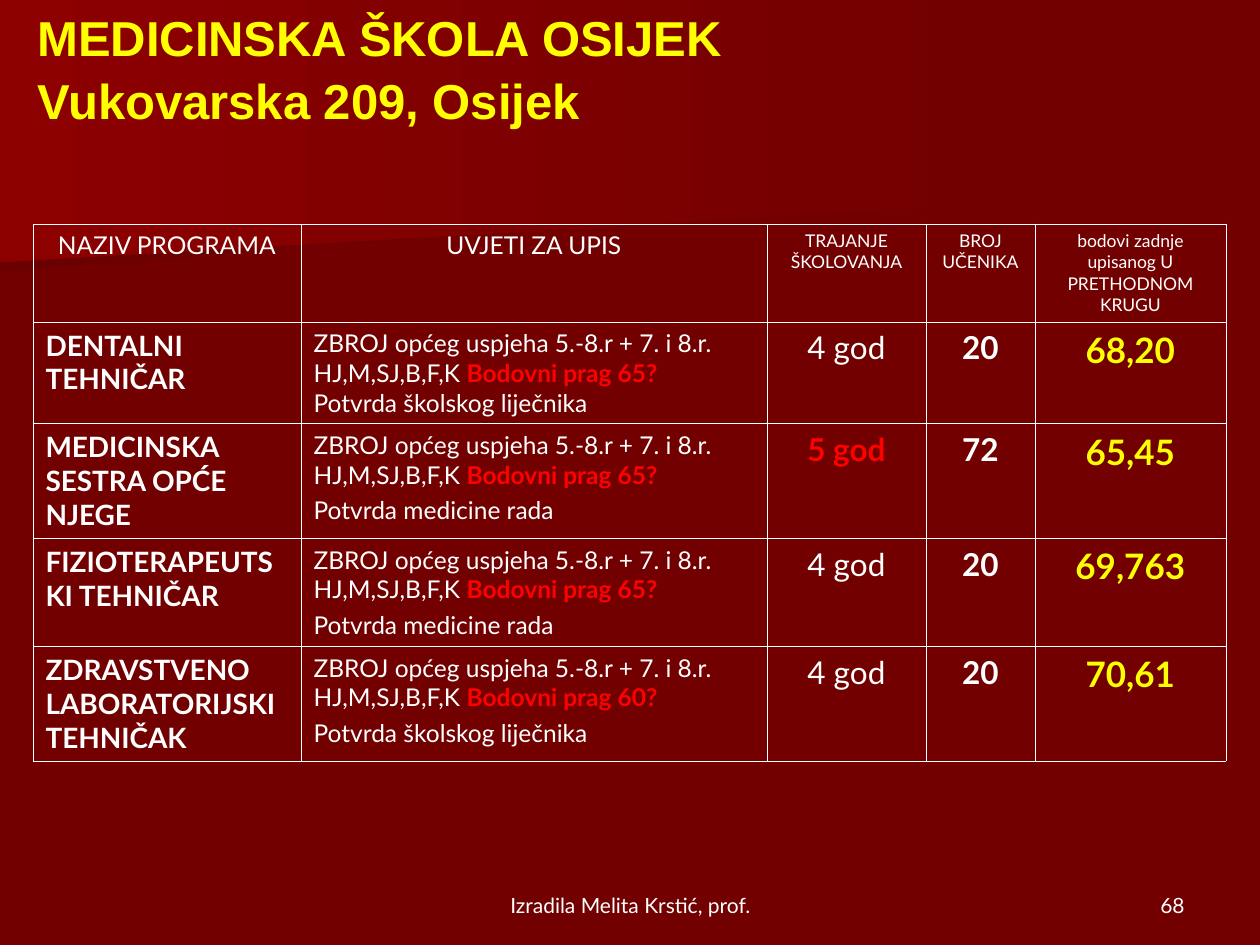
from lxml import etree
from pptx import Presentation, util as u
from pptx.dml import color as dml
from pptx.enum import text as t
from pptx.oxml import ns

PX = u.Inches(1) / 126
WHITE, YELLOW, RED, MAROON = "FFFFFF", "FFFF00", "FF0000", "720000"
LEFT, CENTER, RIGHT = t.PP_ALIGN.LEFT, t.PP_ALIGN.CENTER, t.PP_ALIGN.RIGHT
TOP, BOTTOM = t.MSO_ANCHOR.TOP, t.MSO_ANCHOR.BOTTOM

COLUMNS = [268, 466, 159, 109, 191]
ROWS = [98, 101, 115, 108, 114]
HEADERS = [
    ("NAZIV PROGRAMA", 14),
    ("UVJETI ZA UPIS", 14),
    ("TRAJANJE ŠKOLOVANJA", 10),
    ("BROJ UČENIKA", 10),
    ("bodovi zadnje upisanog U PRETHODNOM KRUGU", 10),
]
CONDITION = "ZBROJ općeg uspjeha 5.-8.r + 7. i 8.r. HJ,M,SJ,B,F,K "
# name, threshold, certificate, gap before certificate, years, pupils, points
PROGRAMMES = [
    ("DENTALNI TEHNIČAR", 65, "školskog liječnika", 0, 4, "20", "68,20"),
    ("MEDICINSKA SESTRA OPĆE NJEGE", 65, "medicine rada", 3.5, 5, "72", "65,45"),
    ("FIZIOTERAPEUTSKI TEHNIČAR", 65, "medicine rada", 3.5, 4, "20", "69,763"),
    ("ZDRAVSTVENO LABORATORIJSKI TEHNIČAK", 60, "školskog liječnika", 3.5, 4,
     "20", "70,61"),
]


def px(value):
    return u.Emu(round(value * PX))


def rgb(value):
    return dml.RGBColor.from_string(value)


def set_all(target, values):
    for name, value in values.items():
        setattr(target, name, value)


def run(text, size, color=WHITE, bold=False, font="Lato"):
    return text, color, {"size": u.Pt(size), "bold": bold, "name": font}


def write(frame, paragraphs, **layout):
    """Each paragraph is a list of runs; layout holds paragraph attributes."""
    for index, runs in enumerate(paragraphs):
        paragraph = frame.add_paragraph() if index else frame.paragraphs[0]
        set_all(paragraph, layout)
        if not index:
            paragraph.space_before = None
        for text, color, values in runs:
            piece = paragraph.add_run()
            piece.text = text
            set_all(piece.font, values)
            piece.font.color.rgb = rgb(color)


def add_text(slide, box, paragraphs, anchor, **layout):
    frame = slide.shapes.add_textbox(*map(px, box)).text_frame
    set_all(frame, {"word_wrap": True, "vertical_anchor": anchor})
    write(frame, paragraphs, **layout)
    return frame


def add_panel(slide, points, left_color):
    builder = slide.shapes.build_freeform(*points[0], scale=PX)
    builder.add_line_segments(points[1:], close=True)
    shape = builder.convert_to_shape()
    shape.shadow.inherit = False
    shape.line.fill.background()
    shape.fill.gradient()
    shape.fill.gradient_angle = 180
    for stop, position, color in zip(shape.fill.gradient_stops, (0, 1),
                                     (MAROON, left_color)):
        stop.position = position
        stop.color.rgb = rgb(color)


def add_background(slide):
    slide.background.fill.solid()
    slide.background.fill.fore_color.rgb = rgb(MAROON)
    add_panel(slide, [(980, 193), (0, 272), (0, 127), (982, 127), (980, 161)],
              "6B0000")
    add_panel(slide, [(997, 204), (0, 262), (0, 0), (998, 0)], "8C0000")


def add_title(slide, box):
    lines = ["MEDICINSKA ŠKOLA OSIJEK", "Vukovarska 209, Osijek"]
    frame = add_text(slide, box,
                     [[run(line, 28, YELLOW, True, "Arial")] for line in lines],
                     TOP, alignment=LEFT, space_before=u.Pt(2))
    set_all(frame, {"margin_top": 0, "margin_bottom": 0})


def add_borders(cell):
    properties = cell._tc.get_or_add_tcPr()
    for side in ("lnL", "lnR", "lnT", "lnB"):
        line = etree.SubElement(properties, ns.qn("a:" + side),
                                w=str(u.Pt(0.45)))
        fill = etree.SubElement(line, ns.qn("a:solidFill"))
        etree.SubElement(fill, ns.qn("a:srgbClr"), val=WHITE)


def fill_cell(cell, paragraphs, alignment=CENTER, gap=0):
    add_borders(cell)
    cell.fill.background()
    write(cell.text_frame, paragraphs, alignment=alignment, line_spacing=1.01,
          space_before=u.Pt(gap))


def add_programmes(slide, left, top):
    table = slide.shapes.add_table(len(ROWS), len(COLUMNS), px(left), px(top),
                                   px(sum(COLUMNS)), px(sum(ROWS))).table
    set_all(table, {"first_row": False, "horz_banding": False})
    for column, width in zip(table.columns, COLUMNS):
        column.width = px(width)
    for row, height in zip(table.rows, ROWS):
        row.height = px(height)

    # Header row
    for cell, header in zip(table.rows[0].cells, HEADERS):
        fill_cell(cell, [[run(*header)]])

    # One row for each programme
    for index, programme in enumerate(PROGRAMMES, start=1):
        name, threshold, certificate, gap, years, pupils, points = programme
        longer = years == 5
        cells = table.rows[index].cells
        fill_cell(cells[0], [[run(name, 16, bold=True)]], LEFT)
        fill_cell(cells[1], [
            [run(CONDITION, 14), run(f"Bodovni prag {threshold}?", 14, RED, True)],
            [run(f"Potvrda {certificate}", 14)],
        ], LEFT, gap)
        fill_cell(cells[2], [[run(f"{years} god", 18, RED if longer else WHITE,
                                  longer)]])
        fill_cell(cells[3], [[run(pupils, 18, bold=True)]])
        fill_cell(cells[4], [[run(points, 20, YELLOW, True)]])


def add_footer(slide, top, height):
    add_text(slide, (431, top, 399, height),
             [[run("Izradila Melita Krstić, prof.", 12)]], BOTTOM,
             alignment=CENTER)
    add_text(slide, (903, top, 294, height), [[run("68", 12)]], BOTTOM,
             alignment=RIGHT)


def main():
    presentation = Presentation()
    set_all(presentation, {"slide_width": px(1260), "slide_height": px(945)})
    slide = presentation.slides.add_slide(presentation.slide_layouts[6])
    add_background(slide)
    add_title(slide, (25, 8, 1134, 116))
    add_programmes(slide, 33, 224)
    add_footer(slide, 861, 63)
    presentation.save("out.pptx")


if __name__ == "__main__":
    main()
